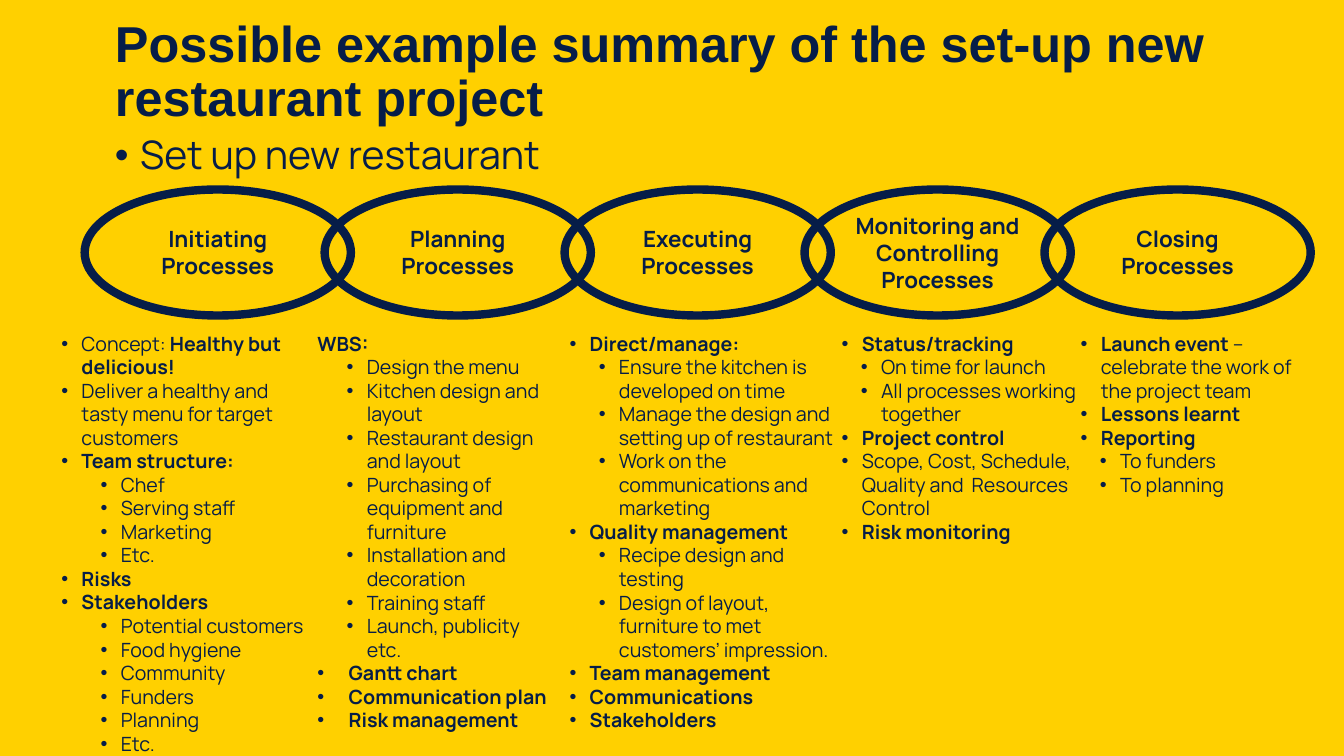
from lxml.etree import SubElement
from pptx import Presentation
from pptx.dml.color import RGBColor
from pptx.enum.shapes import MSO_SHAPE
from pptx.enum.text import MSO_ANCHOR, MSO_AUTO_SIZE, PP_ALIGN
from pptx.oxml.ns import qn
from pptx.util import Inches, Pt

NAVY = "061D48"
STAGES = ["Initiating Processes", "Planning Processes", "Executing Processes",
          "Monitoring and Controlling Processes", "Closing Processes"]

# Each column: left, width, height, top-level indent, sub-level indent, lines.
# "*" switches bold on and off, "> " marks a sub-item, "= " a line with no bullet.
COLUMNS = [
    (0.51, 2.66, 4.34, 0.2, 0.59, [
        "Concept: *Healthy but delicious!*",
        "Deliver a healthy and tasty menu for target customers",
        "*Team structure:*",
        "> Chef", "> Serving staff", "> Marketing", "> Etc.",
        "*Risks*",
        "*Stakeholders*",
        "> Potential customers", "> Food hygiene", "> Community",
        "> Funders", "> Planning", "> Etc."]),
    (3.05, 2.54, 4.11, 0.31, 0.49, [
        "= *WBS:*",
        "> Design the menu", "> Kitchen design and layout",
        "> Restaurant design and layout",
        "> Purchasing of equipment and furniture",
        "> Installation and decoration", "> Training staff",
        "> Launch, publicity etc.",
        "*Gantt chart*", "*Communication plan*", "*Risk management*"]),
    (5.55, 2.92, 4.11, 0.2, 0.49, [
        "*Direct/manage:*",
        "> Ensure the kitchen is developed on time",
        "> Manage the design and setting up of restaurant",
        "> Work on the communications and marketing",
        "*Quality management*",
        "> Recipe design and testing",
        "> Design of layout, furniture to met customers’ impression.",
        "*Team management*", "*Communications*", "*Stakeholders*"]),
    (8.25, 2.54, 2.22, 0.2, 0.39, [
        "*Status/tracking*",
        "> On time for launch", "> All processes working together",
        "*Project control*",
        "Scope, Cost, Schedule, Quality and  Resources Control",
        "*Risk monitoring*"]),
    (10.62, 2.38, 1.75, 0.2, 0.39, [
        "*Launch event *– celebrate the work of the project team",
        "*Lessons learnt*",
        "*Reporting*",
        "> To funders", "> To planning"]),
]


def color(code):
    return RGBColor.from_string(code)


def assign(target, values):
    for name, value in values.items():
        setattr(target, name, value)


def bullet(para, left, hang):
    """Give a paragraph a hanging bullet, lengths in inches."""
    props = para._p.get_or_add_pPr()
    props.set("marL", str(Inches(left)))
    props.set("indent", str(-Inches(hang)))
    SubElement(props, qn("a:buFont")).set("typeface", "Arial")
    SubElement(props, qn("a:buChar")).set("char", "•")


class Canvas:
    font = {"name": "Manrope", "size": Pt(14), "bold": False}

    def __init__(self, slide):
        self.slide = slide
        fill = slide.background.fill
        fill.solid()
        fill.fore_color.rgb = color("FFD000")

    def label(self, para, text, ink=NAVY, **style):
        run = para.add_run()
        run.text = text
        assign(run.font, {**self.font, **style})
        run.font.color.rgb = color(ink)

    def holder(self, index, box, text, anchor, **style):
        """Move a placeholder, fill it with one line and return its paragraph."""
        shape = self.slide.placeholders[index]
        assign(shape, dict(zip(("left", "top", "width", "height"), map(Inches, box))))
        frame = shape.text_frame
        assign(frame, {"word_wrap": True, "auto_size": MSO_AUTO_SIZE.NONE,
                       "vertical_anchor": anchor})
        para = frame.paragraphs[0]
        assign(para, {"alignment": PP_ALIGN.LEFT, "line_spacing": 0.9,
                      "space_before": Pt(0)})
        self.label(para, text, **style)
        return para

    def oval(self, left, text):
        shape = self.slide.shapes.add_shape(
            MSO_SHAPE.OVAL, Inches(left), Inches(1.88), Inches(2.64), Inches(1.25))
        shape.shadow.inherit = False
        shape.fill.background()
        shape.line.color.rgb = color(NAVY)
        shape.line.width = Pt(6)
        frame = shape.text_frame
        assign(frame, {"word_wrap": True, "vertical_anchor": MSO_ANCHOR.MIDDLE})
        para = frame.paragraphs[0]
        para.alignment = PP_ALIGN.CENTER
        self.label(para, text, size=Pt(16), bold=True)

    def column(self, left, width, height, main, sub, lines):
        box = self.slide.shapes.add_textbox(
            Inches(left), Inches(3.24), Inches(width), Inches(height))
        frame = box.text_frame
        assign(frame, {"word_wrap": True, "auto_size": MSO_AUTO_SIZE.SHAPE_TO_FIT_TEXT})
        for row, line in enumerate(lines):
            para = frame.add_paragraph() if row else frame.paragraphs[0]
            if line.startswith("> "):
                para.level = 1
                bullet(para, sub, 0.2)
            elif not line.startswith("= "):
                bullet(para, main, main)
            text = line.removeprefix("> ").removeprefix("= ")
            for part, piece in enumerate(text.split("*")):
                if piece:
                    self.label(para, piece, bold=part % 2 == 1)


def main():
    deck = Presentation()
    deck.slide_width, deck.slide_height = Inches(13.33), Inches(7.5)
    page = Canvas(deck.slides.add_slide(deck.slide_layouts[1]))
    page.holder(0, (1.04, 0, 11.25, 1.45),
                "Possible example summary of the set-up new restaurant project",
                MSO_ANCHOR.MIDDLE, name="Arial", size=Pt(36), bold=True)
    topic = page.holder(1, (1.04, 1.3, 11.5, 0.77), "Set up new restaurant",
                        MSO_ANCHOR.TOP, ink="071D49", size=Pt(28))
    bullet(topic, 0.25, 0.25)
    for place, stage in enumerate(STAGES):
        page.oval(0.84 + 2.38 * place, stage)
    for column in COLUMNS:
        page.column(*column)
    deck.save("out.pptx")


if __name__ == "__main__":
    main()
